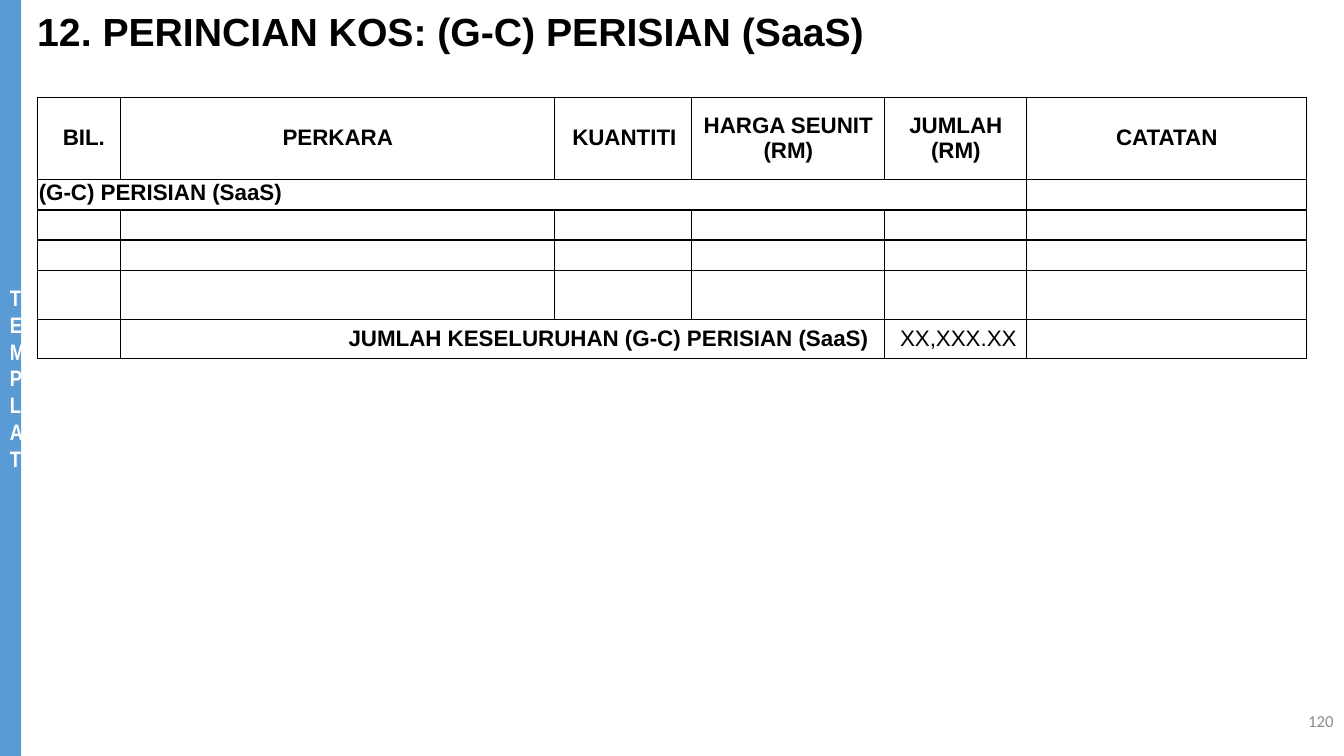
from dataclasses import dataclass

import lxml.etree
import pptx
import pptx.dml.color
import pptx.enum.shapes
import pptx.enum.text
import pptx.oxml.ns
import pptx.presentation
import pptx.shapes.autoshape
import pptx.slide
import pptx.table
import pptx.text.text
import pptx.util

Pt = pptx.util.Pt
Align = pptx.enum.text.PP_ALIGN
Anchor = pptx.enum.text.MSO_ANCHOR


@dataclass(frozen=True)
class Theme:
    black: str = "000000"
    white: str = "FFFFFF"
    bar_blue: str = "5B9BD5"
    page_grey: str = "8C8C8C"
    font: str = "Arial"
    bar_font: str = "Arial Narrow"
    page_font: str = "Calibri"
    title_size: float = 28
    body_size: float = 16
    page_size: float = 12
    border_width: float = 1


@dataclass(frozen=True)
class Entry:
    row: int
    column: int
    lines: tuple[str, ...]
    align: Align = Align.CENTER
    bold: bool = True
    left: float = 0.7
    right: float = 0.7
    span: int = 1
    line_spacing: float | None = None


THEME = Theme()
COLUMN_WIDTHS = (59.3, 310, 97.9, 137.9, 101.4, 200)
ROW_HEIGHTS = (58.5, 22, 21.5, 21.5, 35, 28)
BLANK_ROWS = range(2, 5)
ENTRIES = (
    Entry(0, 0, ("BIL.",), left=7.2),
    Entry(0, 1, ("PERKARA",)),
    Entry(0, 2, ("KUANTITI",), left=2.2),
    Entry(0, 3, ("HARGA SEUNIT", "(RM)")),
    Entry(0, 4, ("JUMLAH", "(RM)")),
    Entry(0, 5, ("CATATAN",)),
    Entry(1, 0, ("(G-C) PERISIAN (SaaS)",), Align.LEFT, span=5, line_spacing=15.7),
    Entry(5, 1, ("JUMLAH KESELURUHAN (G-C) PERISIAN (SaaS)",), Align.RIGHT,
          right=11.6, span=3),
    Entry(5, 4, ("XX,XXX.XX",), Align.RIGHT, bold=False, right=7.2),
)


def color(value: str) -> pptx.dml.color.RGBColor:
    return pptx.dml.color.RGBColor.from_string(value)


def style_paragraph(paragraph: pptx.text.text._Paragraph, align: Align, size: float,
                    ink: str, font: str = THEME.font, bold: bool = True) -> None:
    paragraph.alignment = align
    paragraph.font.name = font
    paragraph.font.size = Pt(size)
    paragraph.font.bold = bold
    paragraph.font.color.rgb = color(ink)


def add_side_bar(slide: pptx.slide.Slide, height: int) -> None:
    bar = slide.shapes.add_shape(
        pptx.enum.shapes.MSO_SHAPE.RECTANGLE, 0, 0, Pt(15.1), height)
    bar.shadow.inherit = False
    bar.fill.solid()
    bar.fill.fore_color.rgb = color(THEME.bar_blue)
    bar.line.fill.background()
    frame = bar.text_frame
    frame.word_wrap = True
    frame.vertical_anchor = Anchor.MIDDLE
    frame.text = "TEMPLAT"
    style_paragraph(frame.paragraphs[0], Align.CENTER, THEME.body_size,
                    THEME.white, THEME.bar_font)


def format_title(slide: pptx.slide.Slide) -> None:
    title = slide.shapes.title
    title.left, title.top, title.width, title.height = Pt(19.4), Pt(1), Pt(828), Pt(46.8)
    frame = title.text_frame
    frame.auto_size = pptx.enum.text.MSO_AUTO_SIZE.NONE
    frame.word_wrap = True
    frame.vertical_anchor = Anchor.MIDDLE
    frame.text = "12. PERINCIAN KOS: (G-C) PERISIAN (SaaS)"
    paragraph = frame.paragraphs[0]
    paragraph.line_spacing = 0.9
    style_paragraph(paragraph, Align.LEFT, THEME.title_size, THEME.black)


def add_borders(cell: pptx.table._Cell) -> None:
    qualify = pptx.oxml.ns.qn
    properties = cell._tc.get_or_add_tcPr()
    for side in ("lnL", "lnR", "lnT", "lnB"):
        line = lxml.etree.SubElement(properties, qualify(f"a:{side}"),
                                     w=str(Pt(THEME.border_width)))
        fill = lxml.etree.SubElement(line, qualify("a:solidFill"))
        lxml.etree.SubElement(fill, qualify("a:srgbClr"), val=THEME.black)


def prepare_cell(cell: pptx.table._Cell, filled: bool) -> None:
    add_borders(cell)
    if filled:
        cell.fill.solid()
        cell.fill.fore_color.rgb = color(THEME.white)
    else:
        cell.fill.background()
    cell.margin_left = cell.margin_right = Pt(0.7)
    cell.margin_top = cell.margin_bottom = 0
    cell.vertical_anchor = Anchor.MIDDLE


def fill_entry(table: pptx.table.Table, entry: Entry) -> None:
    cell = table.cell(entry.row, entry.column)
    if entry.span > 1:
        cell.merge(table.cell(entry.row, entry.column + entry.span - 1))
    cell.margin_left, cell.margin_right = Pt(entry.left), Pt(entry.right)
    cell.text = "\n".join(entry.lines)
    for paragraph in cell.text_frame.paragraphs:
        if entry.line_spacing:
            paragraph.line_spacing = Pt(entry.line_spacing)
        style_paragraph(paragraph, entry.align, THEME.body_size, THEME.black,
                        bold=entry.bold)


def add_cost_table(slide: pptx.slide.Slide) -> None:
    frame = slide.shapes.add_table(
        len(ROW_HEIGHTS), len(COLUMN_WIDTHS), Pt(27), Pt(69.5),
        Pt(sum(COLUMN_WIDTHS)), Pt(sum(ROW_HEIGHTS)))
    table = frame.table
    table.first_row = table.horz_banding = False
    for column, width in zip(table.columns, COLUMN_WIDTHS):
        column.width = Pt(width)
    for index, (row, height) in enumerate(zip(table.rows, ROW_HEIGHTS)):
        row.height = Pt(height)
        for cell in row.cells:
            prepare_cell(cell, index not in BLANK_ROWS)
    for entry in ENTRIES:
        fill_entry(table, entry)
    for cell in table.iter_cells():
        if not cell.text:
            lxml.etree.SubElement(cell.text_frame.paragraphs[0]._p,
                                  pptx.oxml.ns.qn("a:endParaRPr"),
                                  sz=str(int(THEME.page_size * 100)))


def add_page_number(slide: pptx.slide.Slide) -> None:
    box = slide.shapes.add_textbox(Pt(743.8), Pt(500.4), Pt(216), Pt(28.8))
    frame = box.text_frame
    frame.word_wrap = True
    frame.vertical_anchor = Anchor.MIDDLE
    frame.text = "120"
    style_paragraph(frame.paragraphs[0], Align.RIGHT, THEME.page_size,
                    THEME.page_grey, THEME.page_font, bold=False)


def main() -> None:
    presentation = pptx.Presentation()
    presentation.slide_width, presentation.slide_height = Pt(960), Pt(540)
    slide = presentation.slides.add_slide(
        presentation.slide_layouts.get_by_name("Title Only"))
    add_side_bar(slide, presentation.slide_height)
    add_cost_table(slide)
    format_title(slide)
    add_page_number(slide)
    presentation.save("out.pptx")


if __name__ == "__main__":
    main()
